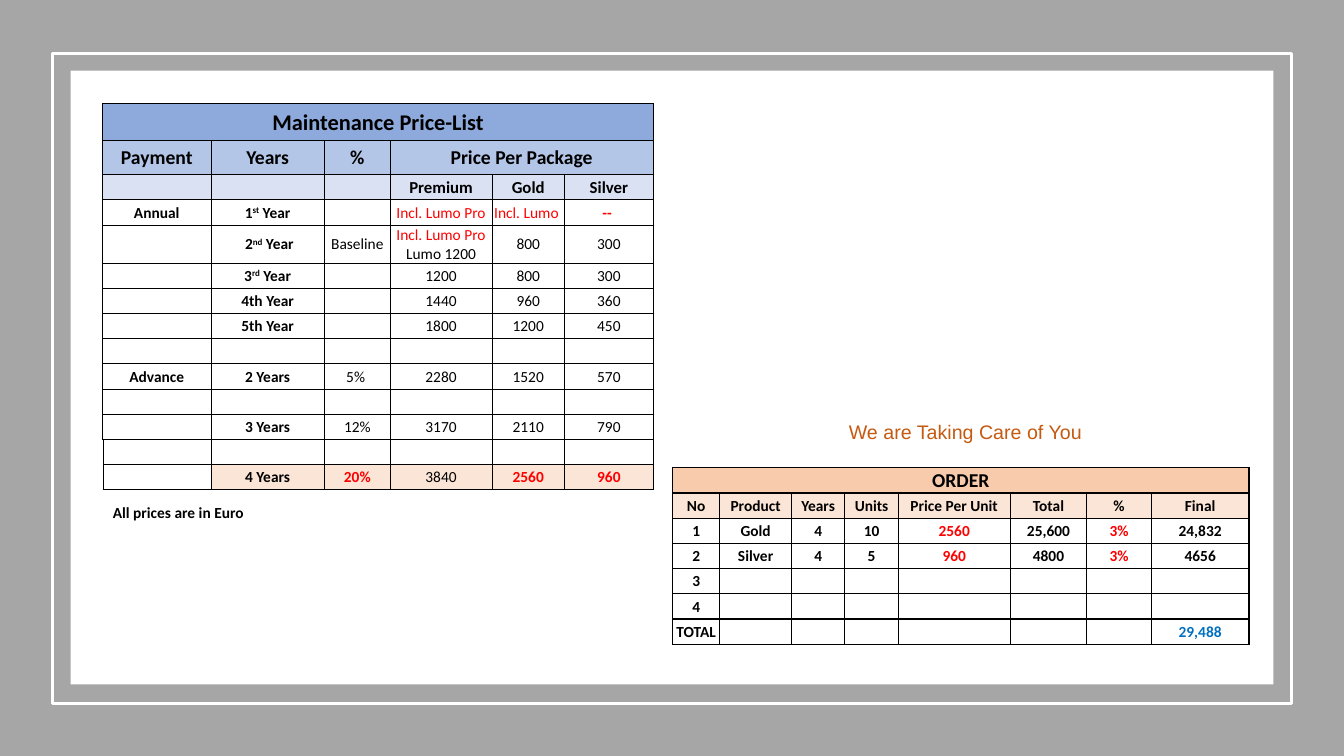
import itertools
from dataclasses import dataclass, field

import lxml.etree
import pptx
import pptx.dml.color
import pptx.enum.shapes
import pptx.enum.text
import pptx.oxml.ns
import pptx.util

Inches = pptx.util.Inches
Pt = pptx.util.Pt
qn = pptx.oxml.ns.qn
ALIGN = pptx.enum.text.PP_ALIGN
BLACK, RED, WHITE, PEACH = "000000", "FF0000", "FFFFFF", "FBE5D6"


@dataclass
class Panel:
    box: tuple
    fill: str = ""
    line: str = ""


@dataclass
class Label:
    box: tuple
    text: str
    style: dict


@dataclass
class Grid:
    left: float
    top: float
    cols: list
    heights: list
    rows: list
    merges: list
    fills: dict
    sizes: dict
    colors: dict
    bold: set
    outlined: bool
    roomy: set = field(default_factory=set)


PANELS = [
    Panel((0, 0, 13.33, 7.5), fill="A6A6A6"),
    Panel((0.52, 0.53, 12.29, 6.45), line=WHITE),
    Panel((0.7, 0.7, 11.93, 6.09), fill=WHITE),
]

LABELS = [
    Label((8.32, 4.12, 3.32, 0.34), "We are Taking Care of You",
          dict(size=14, font="Arial", color="C55A11")),
    Label((1.02, 4.94, 2.42, 0.29), "All prices are in Euro", dict(bold=True)),
]

ORDER = Grid(
    6.67, 4.64, [0.47, 0.71, 0.53, 0.53, 1.11, 0.76, 0.64, 0.97], [0.25] * 7,
    [
        ["ORDER"],
        ["No", "Product", "Years", "Units", "Price Per Unit", "Total", "%", "Final"],
        ["1", "Gold", "4", "10", "2560", "25,600", "3%", "24,832"],
        ["2", "Silver", "4", "5", "960", "4800", "3%", "4656"],
        ["3"],
        ["4"],
        ["TOTAL", "", "", "", "", "", "", "29,488"],
    ],
    merges=[(0, 0, 7)],
    fills={0: "F8CBAD", 1: PEACH},
    sizes={0: 14},
    colors={**{(i, j): RED for i in (2, 3) for j in (4, 6)}, (6, 7): "0070C0"},
    bold=set(itertools.product(range(7), range(8))),
    outlined=True,
)

PRICES = Grid(
    1.02, 1.03, [1.07, 1.13, 0.65, 1.01, 0.72, 0.88], [0.33] * 2 + [0.25] * 12,
    [
        ["Maintenance Price-List"],
        ["Payment", "Years", "%", "Price Per Package"],
        ["", "", "", "Premium", "Gold", "Silver"],
        ["Annual", "1^st^ Year", "", "Incl. Lumo Pro", "Incl. Lumo ", "-- "],
        ["", "\xa02^nd^ Year", "Baseline", "Incl. Lumo Pro\nLumo 1200", "800", "300"],
        ["", "3^rd^ Year", "", "1200", "800", "300"],
        ["", "4th Year", "", "1440", "960", "360"],
        ["", "5th Year", "", "1800", "1200", "450"],
        [],
        ["Advance", "2 Years", "5%\xa0", "2280", "1520", "570"],
        [],
        ["", "3 Years", "12%", "3170", "2110", "790"],
        [],
        ["", "4 Years", "20%", "3840", "2560", "960"],
    ],
    merges=[(0, 0, 5), (1, 3, 5)],
    fills={0: "8EA9DB", 1: "B4C6E7", 2: "D9E1F2", **{(13, j): PEACH for j in range(1, 6)}},
    sizes={0: 16, 1: 14, 2: 12},
    colors={**{(3, j): RED for j in (3, 4, 5)}, (4, 3): f"{RED} {BLACK}",
            **{(13, j): RED for j in (2, 4, 5)}},
    bold={(i, j) for i in range(14) for j in range(6) if i < 3 or j < 2}
    | {(3, 5), (13, 2), (13, 4), (13, 5)},
    outlined=False,
    roomy={(0, 0), (1, 3)},
)


def rgb(color: str) -> pptx.dml.color.RGBColor:
    return pptx.dml.color.RGBColor.from_string(color)


def write(tf, text: str, *, size: float = 11, font: str = "Calibri", color: str = BLACK,
          bold: bool = False, align=ALIGN.LEFT) -> None:
    colors = itertools.cycle(color.split())
    for i, line in enumerate(text.split("\n")):
        p = tf.add_paragraph() if i else tf.paragraphs[0]
        p.alignment = align
        if not line:
            lxml.etree.SubElement(p._p, qn("a:endParaRPr"), sz=str(size * 100))
            continue
        paint = rgb(next(colors))
        for k, part in enumerate(line.split("^")):
            r = p.add_run()
            r.text = part
            r.font.size, r.font.name, r.font.bold = Pt(size), font, bold
            r.font.color.rgb = paint
            if k % 2:
                r._r.get_or_add_rPr().set("baseline", "30000")


def add_panel(s, panel: Panel) -> None:
    sp = s.shapes.add_shape(pptx.enum.shapes.MSO_SHAPE.RECTANGLE, *map(Inches, panel.box))
    sp.shadow.inherit = False
    if panel.fill:
        sp.fill.solid()
        sp.fill.fore_color.rgb = rgb(panel.fill)
    else:
        sp.fill.background()
    if panel.line:
        sp.line.color.rgb = rgb(panel.line)
        sp.line.width = Pt(2)
    else:
        sp.line.fill.background()


def add_label(s, label: Label) -> None:
    tf = s.shapes.add_textbox(*map(Inches, label.box)).text_frame
    tf.word_wrap = True
    tf.auto_size = pptx.enum.text.MSO_AUTO_SIZE.SHAPE_TO_FIT_TEXT
    write(tf, label.text, **label.style)


def border_widths(grid: Grid, i: int, j: int) -> dict:
    if grid.outlined or i == 0:
        return dict.fromkeys("LRTB", 1)
    left = 0.25 if j else 1 if i < 12 else 0.5
    right = 1 if i == 1 and j == len(grid.cols) - 1 else 0.25
    return {"L": left, "R": right, "T": 1 if i < 3 else 0.5, "B": 1 if i < 2 else 0.5}


def set_borders(cell, widths: dict) -> None:
    tcPr = cell._tc.get_or_add_tcPr()
    for side, width in widths.items():
        ln = lxml.etree.SubElement(tcPr, qn(f"a:ln{side}"), w=str(Pt(width)))
        fill = lxml.etree.SubElement(ln, qn("a:solidFill"))
        lxml.etree.SubElement(fill, qn("a:srgbClr"), val=BLACK)


def add_grid(s, grid: Grid) -> None:
    table = s.shapes.add_table(len(grid.heights), len(grid.cols), Inches(grid.left),
                               Inches(grid.top), Inches(sum(grid.cols)),
                               Inches(sum(grid.heights))).table
    table.first_row = table.horz_banding = False
    for column, width in zip(table.columns, grid.cols):
        column.width = Inches(width)
    for row, height in zip(table.rows, grid.heights):
        row.height = Inches(height)
    for i, j in itertools.product(range(len(grid.heights)), range(len(grid.cols))):
        cell = table.cell(i, j)
        set_borders(cell, border_widths(grid, i, j))
        fill = grid.fills.get((i, j), grid.fills.get(i))
        if fill:
            cell.fill.solid()
            cell.fill.fore_color.rgb = rgb(fill)
        else:
            cell.fill.background()
        side, top, bottom = (0.09, 0.05, 0.05) if (i, j) in grid.roomy else (0.01, 0.01, 0)
        cell.margin_left = cell.margin_right = Inches(side)
        cell.margin_top, cell.margin_bottom = Inches(top), Inches(bottom)
        cell.vertical_anchor = pptx.enum.text.MSO_ANCHOR.MIDDLE
        text = grid.rows[i][j] if j < len(grid.rows[i]) else ""
        write(cell.text_frame, text, size=grid.sizes.get(i, 11), bold=(i, j) in grid.bold,
              color=grid.colors.get((i, j), BLACK), align=ALIGN.CENTER)
    for i, first, last in grid.merges:
        table.cell(i, first).merge(table.cell(i, last))


def main() -> None:
    prs = pptx.Presentation()
    prs.slide_width, prs.slide_height = Inches(13.33), Inches(7.5)
    s = prs.slides.add_slide(prs.slide_layouts[6])
    for panel in PANELS:
        add_panel(s, panel)
    for label in LABELS:
        add_label(s, label)
    for grid in (ORDER, PRICES):
        add_grid(s, grid)
    prs.save("out.pptx")


if __name__ == "__main__":
    main()
